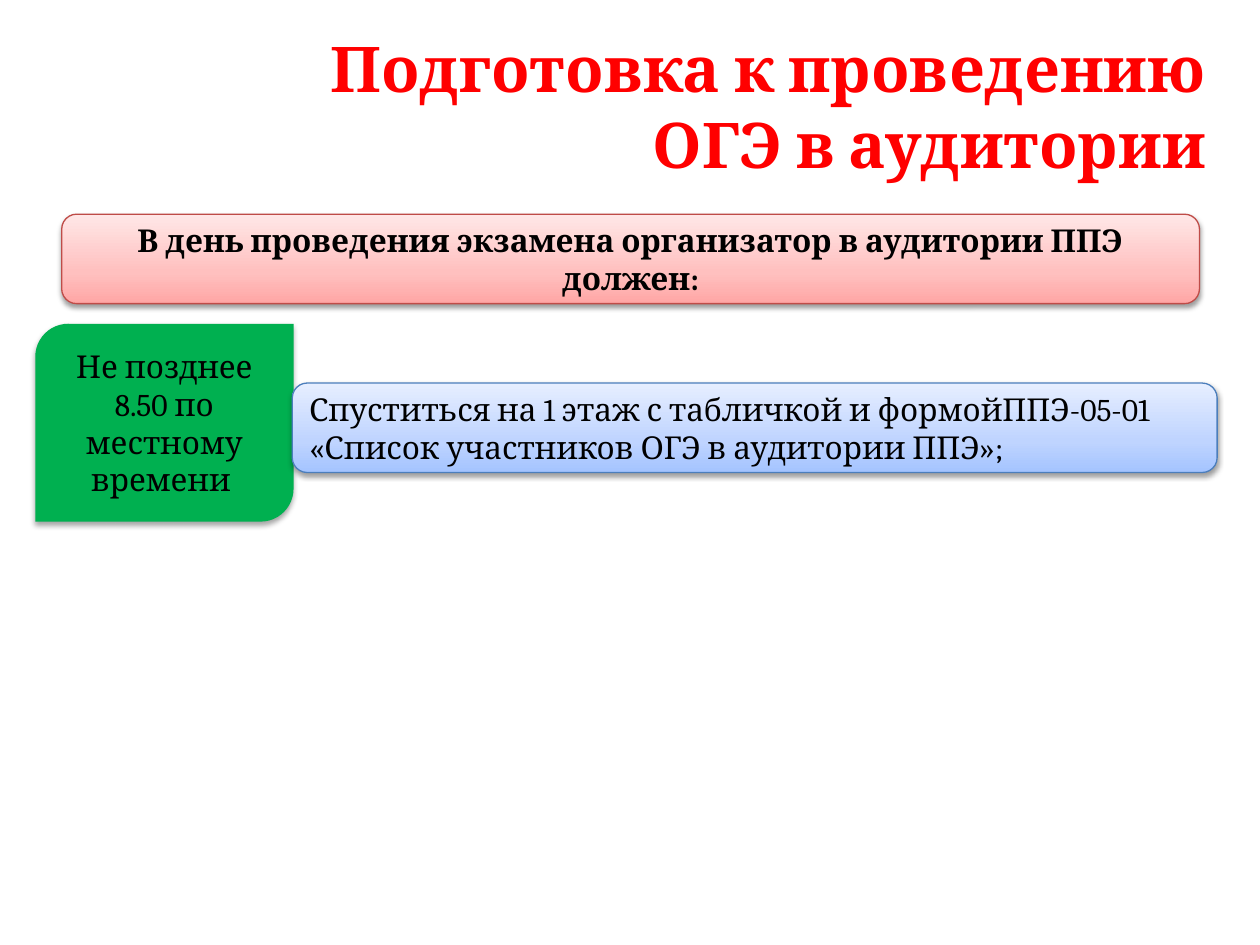
from copy import deepcopy

from lxml import etree
from pptx import Presentation
from pptx.dml.color import RGBColor
from pptx.enum.shapes import MSO_SHAPE
from pptx.enum.text import MSO_ANCHOR, MSO_AUTO_SIZE, PP_ALIGN
from pptx.oxml.ns import qn
from pptx.util import Inches, Pt

ROUNDED = MSO_SHAPE.ROUNDED_RECTANGLE
DIAGONAL = MSO_SHAPE.ROUND_2_DIAG_RECTANGLE
LEFT, CENTER, RIGHT = PP_ALIGN.LEFT, PP_ALIGN.CENTER, PP_ALIGN.RIGHT
MIDDLE = MSO_ANCHOR.MIDDLE
FONT = "Cambria"


def rgb(value):
    return RGBColor.from_string(value)


def set_text(shape, text, size, color, align, bold=False):
    tf = shape.text_frame
    tf.word_wrap = True
    tf.auto_size = MSO_AUTO_SIZE.NONE
    tf.vertical_anchor = MIDDLE
    p = tf.paragraphs[0]
    p.text = text
    p.alignment = align
    for r in p.runs:
        r.font.name = FONT
        r.font.size = Pt(size)
        r.font.bold = bold
        r.font.color.rgb = rgb(color)


def add_shadow(shape, opacity, distance):
    """Cast a soft black shadow straight down; opacity is in percent."""
    shape.shadow.inherit = False
    effects = shape._element.spPr.find(qn("a:effectLst"))
    outer = etree.SubElement(effects, qn("a:outerShdw"), blurRad=str(Pt(3.1)),
                             dist=str(Pt(distance)), dir="5400000", rotWithShape="0")
    black = etree.SubElement(outer, qn("a:srgbClr"), val="000000")
    etree.SubElement(black, qn("a:alpha"), val=str(opacity * 1000))


def fill_gradient(shape, colors):
    """Blend three colours from the bottom edge to the top."""
    shape.fill.gradient()
    shape.fill.gradient_angle = 90
    stop_list = shape._element.spPr.find(qn("a:gradFill")).find(qn("a:gsLst"))
    stop_list.insert(1, deepcopy(stop_list[0]))
    for stop, position, color in zip(shape.fill.gradient_stops, (0, 0.35, 1), colors):
        stop.position = position
        stop.color.rgb = rgb(color)


def add_shape(slide, kind, left, top, width, height):
    return slide.shapes.add_shape(kind, Inches(left), Inches(top),
                                  Inches(width), Inches(height))


def add_bar(slide, left, top, width, colors, line, text, align, bold=False):
    bar = add_shape(slide, ROUNDED, left, top, width, 0.71)
    fill_gradient(bar, colors)
    bar.line.color.rgb = rgb(line)
    bar.line.width = Pt(0.75)
    add_shadow(bar, 38, 1.6)
    set_text(bar, text, 18, "000000", align, bold)


def add_time_block(slide, text):
    block = add_shape(slide, DIAGONAL, 0.28, 2.57, 2.05, 1.57)
    block.fill.solid()
    block.fill.fore_color.rgb = rgb("00B050")
    block.line.fill.background()
    add_shadow(block, 35, 1.8)
    set_text(block, text, 18, "000000", CENTER)


def add_title(slide, text):
    title = slide.shapes.title
    title.left, title.top = Inches(0.67), Inches(0.21)
    title.width, title.height = Inches(9), Inches(1.25)
    set_text(title, text, 36, "FF0000", RIGHT, bold=True)


def main():
    prs = Presentation()
    prs.slide_width, prs.slide_height = Inches(10), Inches(7.5)
    s = prs.slides.add_slide(prs.slide_layouts[5])
    add_title(s, "Подготовка к проведению\vОГЭ в аудитории")
    add_bar(s, 0.49, 1.7, 9.03, ("FFA6A5", "FFC0BF", "FFE7E7"), "BF4C48",
            "В день проведения экзамена организатор в аудитории ППЭ должен:",
            CENTER, bold=True)
    add_time_block(s, "Не позднее 8.50 по местному времени ")
    add_bar(s, 2.32, 3.04, 7.34, ("A4C4FF", "BFD4FF", "E6EEFF"), "4B7EBC",
            "Спуститься на 1 этаж с табличкой и формойППЭ-05-01 "
            "«Список участников ОГЭ в аудитории ППЭ»;", LEFT)
    prs.save("out.pptx")


if __name__ == "__main__":
    main()
